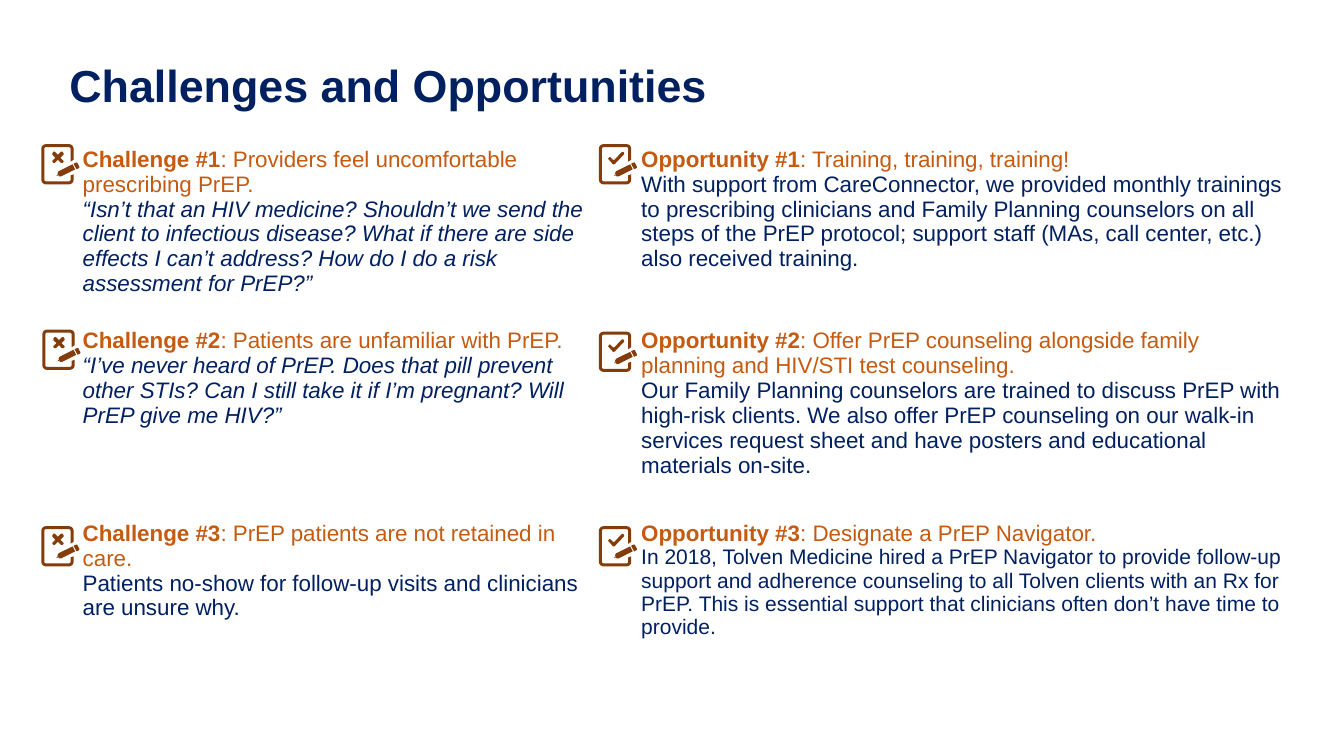
import pptx
import pptx.util
import pptx.dml.color
import pptx.enum.text
from pptx.util import Inches

NAVY, ORANGE, BROWN = "002060", "C55A11", "843C0B"


def colour(hex_string):
    return pptx.dml.color.RGBColor.from_string(hex_string)


def trace(outline):
    """Turn corners (x, y) and Bezier curves (six numbers) into fine points."""
    points = []
    for step in outline:
        if len(step) == 2:
            points.append(step)
            continue
        x0, y0 = points[-1]
        x1, y1, x2, y2, x3, y3 = step
        for t in (0.25, 0.5, 0.75, 1):
            a, b, c, d = (1 - t) ** 3, 3 * t * (1 - t) ** 2, 3 * t * t * (1 - t), t ** 3
            points.append((a * x0 + b * x1 + c * x2 + d * x3,
                           a * y0 + b * y1 + c * y2 + d * y3))
    return [(x * 100, y * 100) for x, y in points]


# Icon outlines, in hundredths of an inch from the icon's corner
page = [(29, 31), (29, 35.5), (29, 36.5, 28, 37, 27, 37), (5, 37),
        (4, 37, 3, 36.5, 3, 35.5), (3, 4.5), (3, 3.5, 4, 3, 5, 3), (27, 3),
        (28, 3, 29, 3.5, 29, 4.5), (29, 17.5), (32, 15.5), (32, 4.5),
        (32, 2, 30, 0, 27, 0), (5, 0), (2, 0, 0, 2, 0, 4.5), (0, 35.5),
        (0, 38, 2, 40, 5, 40), (27, 40), (30, 40, 32, 38, 32, 35.5), (32, 30)]
eraser = [(37, 24), (38, 23.5, 38, 22.5, 37.5, 22), (36, 19),
          (35.5, 18, 35, 18, 34, 18.5), (32, 19.5), (35, 25)]
pencil = [(19.5, 32), (33.5, 25), (31, 20), (17, 27), (16, 29), (17.5, 32)]
tip = [(15, 31.5), (17, 31), (16, 30)]
cross = [(19, 13.5), (22, 10.5), (22, 9), (21, 7.5), (19.5, 7.5), (16.5, 10.5),
         (13.5, 7.5), (12, 7.5), (11, 9), (11, 10.5), (14, 13.5), (11, 16.5),
         (11, 17.5), (12, 18.5), (13.5, 18.5), (16.5, 15.5), (19.5, 18.5),
         (21, 18.5), (22, 17.5), (22, 16.5)]
check = [(16, 19.5), (15.5, 20, 15, 20, 14, 20), (10, 15.5), (9, 15, 9, 14, 10, 13.5),
         (10, 12.5, 11, 12.5, 12, 13.5), (14, 15.5), (14.5, 16, 15.5, 15.5, 16, 15),
         (22, 8.5), (23, 7.5, 24, 7.5, 24.5, 8), (25, 8.5, 25, 9.5, 25, 10)]

# Each entry: icon place, label, headline, body, body size, body italic
challenges = [
    (0.41, 1.43, "Challenge #1", ": Providers feel uncomfortable prescribing PrEP.",
     "“Isn’t that an HIV medicine? Shouldn’t we send the client to infectious disease? "
     "What if there are side effects I can’t address? How do I do a risk assessment for PrEP?”",
     16, True),
    (0.42, 3.27, "Challenge #2", ": Patients are unfamiliar with PrEP.",
     "“I’ve never heard of PrEP. Does that pill prevent \nother STIs? "
     "Can I still take it if I’m pregnant? Will PrEP give me HIV?”", 16, True),
    (0.41, 5.22, "Challenge #3", ": PrEP patients are not retained in \ncare.",
     "Patients no-show for follow-up visits and clinicians \nare unsure why.", 16, False),
]
opportunities = [
    (5.94, 1.43, "Opportunity #1", ": Training, training, training!",
     "With support from CareConnector, we provided monthly trainings to prescribing "
     "clinicians and Family Planning counselors on all steps of the PrEP protocol; "
     "support staff (MAs, call center, etc.) also received training.", 16, False),
    (5.94, 3.29, "Opportunity #2",
     ": Offer PrEP counseling alongside family planning and HIV/STI test counseling.",
     "Our Family Planning counselors are trained to discuss PrEP with high-risk clients. "
     "We also offer PrEP counseling on our walk-in services request sheet and have posters "
     "and educational materials on-site.", 16, False),
    (5.94, 5.22, "Opportunity #3", ": Designate a PrEP Navigator.",
     "In 2018, Tolven Medicine hired a PrEP Navigator to provide follow-up support and "
     "adherence counseling to all Tolven clients with an Rx for PrEP. This is essential "
     "support that clinicians often don’t have time to provide.", 15, False),
]

deck = pptx.Presentation()
deck.slide_width, deck.slide_height = Inches(13.33), Inches(7.5)
slide = deck.slides.add_slide(deck.slide_layouts[6])

# Icons
for entries, mark in ((challenges, cross), (opportunities, check)):
    for left, top, *_ in entries:
        icon = slide.shapes.add_group_shape()
        for outline in (page, eraser, pencil, tip, mark):
            points = trace(outline)
            builder = icon.shapes.build_freeform(*points[0], scale=Inches(1) / 10000)
            builder.add_line_segments(points[1:], close=True)
            part = builder.convert_to_shape(Inches(left), Inches(top))
            part.shadow.inherit = False
            part.fill.solid()
            part.fill.fore_color.rgb = colour(BROWN)
            part.line.fill.background()

# Table of challenges and opportunities, without style or grid
pairs = slide.shapes.add_table(3, 2, Inches(0.72), Inches(1.41),
                               Inches(12.15), Inches(5.38)).table
pairs.first_row = pairs.horz_banding = False
pairs._tbl.tblPr[0].text = "{2D5ABB26-0587-4C30-8999-92F81FD0307C}"
for column, width in zip(pairs.columns, (5.54, 6.61)):
    column.width = Inches(width)
for row, height in zip(pairs.rows, (1.8, 1.91, 1.67)):
    row.height = Inches(height)

for column_index, entries in enumerate((challenges, opportunities)):
    for row_index, (_, _, label, headline, body, size, italic) in enumerate(entries):
        cell = pairs.cell(row_index, column_index)
        cell.fill.background()
        heading = cell.text_frame.paragraphs[0]
        detail = cell.text_frame.add_paragraph()
        for paragraph, text, points, hue, bold, slanted in (
                (heading, label, 16, ORANGE, True, False),
                (heading, headline, 16, ORANGE, False, False),
                (detail, body, size, NAVY, False, italic)):
            for line_index, line in enumerate(text.split("\n")):
                if line_index:
                    paragraph.add_line_break()
                run = paragraph.add_run()
                run.text = line
                run.font.name = "Arial"
                run.font.size = pptx.util.Pt(points)
                run.font.bold = bold
                run.font.italic = slanted
                run.font.color.rgb = colour(hue)

# Title
title = slide.shapes.add_textbox(Inches(0.59), Inches(0.21), Inches(11.5), Inches(1.33))
title.text_frame.word_wrap = True
title.text_frame.vertical_anchor = pptx.enum.text.MSO_ANCHOR.MIDDLE
title_line = title.text_frame.paragraphs[0]
title_line.line_spacing = 0.9
title_run = title_line.add_run()
title_run.text = "Challenges and Opportunities"
title_run.font.name = "Arial"
title_run.font.size = pptx.util.Pt(32)
title_run.font.bold = True
title_run.font.color.rgb = colour(NAVY)

deck.save("out.pptx")
